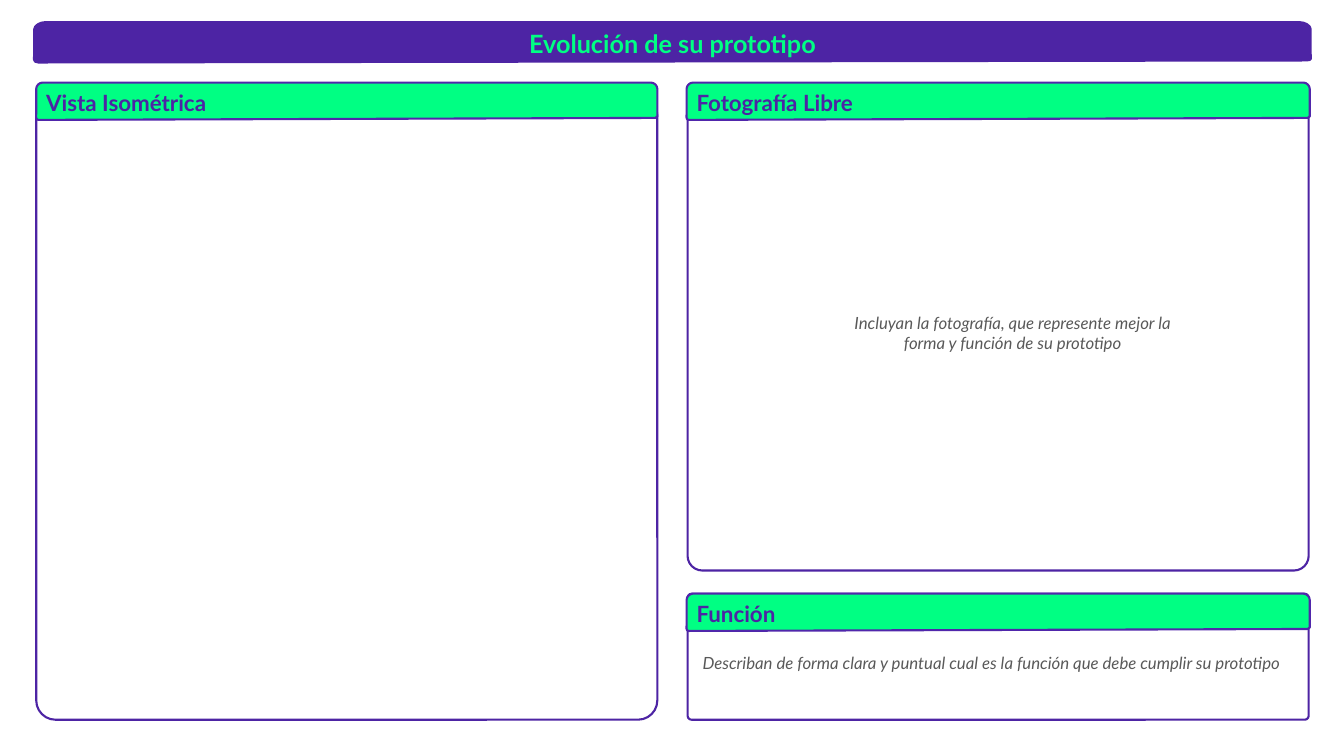
from dataclasses import dataclass

import pptx
import pptx.util
import pptx.dml.color
import pptx.enum.shapes
import pptx.enum.text
import pptx.oxml.ns
from lxml import etree

TITLE = "Evolución de su prototipo"
BANNER = (34, 22, 1266, 40)
PANELS = [
    {"label": "Vista Isométrica", "tab": (36, 82, 616), "frame": (36, 95, 616, 619)},
    {"label": "Fotografía Libre", "tab": (681, 82, 618), "frame": (682, 95, 616, 471)},
    {"label": "Función", "tab": (681, 589, 618), "frame": (682, 589, 616, 125)},
]
HINTS = [
    ("Incluyan la fotografía, que represente mejor la forma y función de su prototipo",
     (818, 305, 373, 50)),
    ("Describan de forma clara y puntual cual es la función que debe cumplir su prototipo",
     (682, 643, 603, 50)),
]
TAB_HEIGHT = 37
FRAME_ROUNDING = 0.031
SCALE = 9144


@dataclass(frozen=True)
class Theme:
    font: str = "Lato"
    purple: str = "4D24A4"
    tab_line: str = "5027AB"
    green: str = "00FF83"
    grey: str = "595959"
    title_size: int = 18
    label_size: int = 16
    hint_size: int = 12
    line_width: float = 1.5


THEME = Theme()
ALIGN = pptx.enum.text.PP_ALIGN
ANCHOR = pptx.enum.text.MSO_ANCHOR
qn = pptx.oxml.ns.qn


def emu(*lengths):
    return [round(length * SCALE) for length in lengths]


def color(code):
    return pptx.dml.color.RGBColor.from_string(code)


def write(shape, text, *, size, ink, bold=False, italic=False,
          align=ALIGN.LEFT, anchor=ANCHOR.MIDDLE, spacing=1.07, after=8):
    frame = shape.text_frame
    frame.word_wrap = True
    frame.auto_size = pptx.enum.text.MSO_AUTO_SIZE.NONE
    frame.vertical_anchor = anchor
    para = frame.paragraphs[0]
    para.alignment = align
    para.line_spacing = spacing
    para.space_before = pptx.util.Pt(0)
    para.space_after = pptx.util.Pt(after)
    span = para.add_run()
    span.text = text
    span.font.name = THEME.font
    span.font.size = pptx.util.Pt(size)
    span.font.bold = bold
    span.font.italic = italic
    span.font.color.rgb = color(ink)


def paint(shape, line, fill=None):
    shape.shadow.inherit = False
    shape.line.color.rgb = color(line)
    shape.line.width = pptx.util.Pt(THEME.line_width)
    if fill:
        shape.fill.solid()
        shape.fill.fore_color.rgb = color(fill)
    else:
        shape.fill.background()


def bend_line(segment, controls):
    segment.tag = qn("a:cubicBezTo")
    for place, control in enumerate(controls):
        x, y = emu(*control)
        point = etree.Element(qn("a:pt"), x=str(x), y=str(y))
        segment.insert(place, point)


def add_band(page, left, top, width, height, *, corner, side, slip, line, fill):
    across, down = corner
    low = height - 2
    middle = (side + low) / 2
    anchors = [
        (0, down), (across, 0), (width - across, 0), (width, down),
        (width, side), (width - slip, low), (slip, height), (0, side),
    ]
    bends = [
        ((0, down / 2), (across / 2, 0)),
        ((width - across / 2, 0), (width, down / 2)),
        ((width, middle), (width + slip / 2, low)),
        ((-slip / 2, height), (0, middle)),
    ]
    points = [tuple(emu(left + x, top + y)) for x, y in anchors]
    builder = page.shapes.build_freeform(*points[0], scale=1.0)
    builder.add_line_segments(points[1:], close=True)
    band = builder.convert_to_shape()
    segments = list(band.element.iter(qn("a:lnTo")))
    for segment, controls in zip(segments[::2], bends):
        bend_line(segment, controls)
    paint(band, line, fill)
    return band


def add_panel(page, panel):
    frame = page.shapes.add_shape(
        pptx.enum.shapes.MSO_SHAPE.ROUNDED_RECTANGLE, *emu(*panel["frame"]))
    frame.adjustments[0] = FRAME_ROUNDING
    paint(frame, THEME.purple)
    tab = add_band(page, *panel["tab"], TAB_HEIGHT, corner=(6, 6), side=30, slip=2,
                   line=THEME.tab_line, fill=THEME.green)
    write(tab, panel["label"], size=THEME.label_size, ink=THEME.purple, bold=True)


def add_title(page):
    banner = add_band(page, *BANNER, corner=(11, 7), side=32, slip=4,
                      line=THEME.purple, fill=THEME.purple)
    title = page.shapes.title
    title.left, title.top, title.width, title.height = emu(*BANNER)
    write(title, TITLE, size=THEME.title_size, ink=THEME.green, bold=True,
          align=ALIGN.CENTER)
    banner.element.addnext(title.element)


def main():
    deck = pptx.Presentation()
    deck.slide_width, deck.slide_height = emu(1333, 750)
    page = deck.slides.add_slide(deck.slide_layouts.get_by_name("Title Only"))
    add_title(page)
    for panel in PANELS:
        add_panel(page, panel)
    for text, place in HINTS:
        box = page.shapes.add_textbox(*emu(*place))
        write(box, text, size=THEME.hint_size, ink=THEME.grey, italic=True,
              align=ALIGN.CENTER, anchor=ANCHOR.TOP, spacing=1.0, after=0)
    deck.save("out.pptx")


if __name__ == "__main__":
    main()
